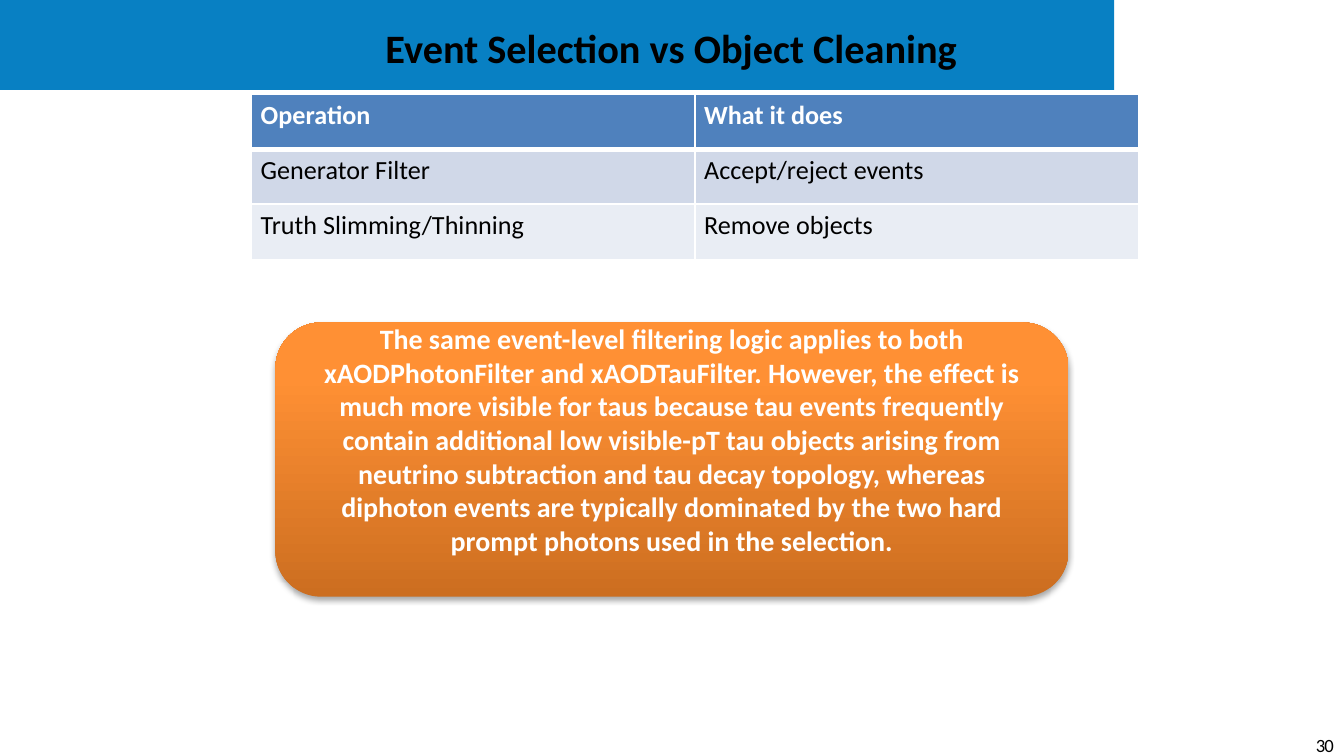
from copy import deepcopy

from lxml.etree import SubElement
from pptx import Presentation
from pptx.dml.color import RGBColor
from pptx.enum.shapes import MSO_SHAPE
from pptx.enum.text import MSO_ANCHOR, PP_ALIGN
from pptx.oxml.ns import qn
from pptx.util import Inches, Pt

COLORS = {
    "banner": "0880C3",
    "header": "4F81BD",
    "band_dark": "D0D8E8",
    "band_light": "E9EDF4",
    "white": "FFFFFF",
    "black": "000000",
    "orange_dark": "CC6E20",
    "orange": "FF9034",
    "orange_light": "FF9136",
}
FONT = "Calibri"

TITLE = "Event Selection vs Object Cleaning"
ROWS = [
    ("Operation", "What it does"),
    ("Generator Filter", "Accept/reject events"),
    ("Truth Slimming/Thinning", "Remove objects"),
]
ROW_FILLS = ["header", "band_dark", "band_light"]
NOTE = (
    "The same event-level filtering logic applies to both xAODPhotonFilter and "
    "xAODTauFilter. However, the effect is much more visible for taus because tau "
    "events frequently contain additional low visible-pT tau objects arising from "
    "neutrino subtraction and tau decay topology, whereas diphoton events are "
    "typically dominated by the two hard prompt photons used in the selection."
)
NOTE_GRADIENT = [(0, "orange_dark"), (0.8, "orange"), (1, "orange_light")]
PAGE_NUMBER = "30"


def rgb(name):
    return RGBColor.from_string(COLORS[name])


def set_text(tf, text, size, color, bold=False, align=PP_ALIGN.LEFT):
    p = tf.paragraphs[0]
    p.text = text
    p.alignment = align
    p.font.name = FONT
    p.font.size = Pt(size)
    p.font.bold = bold
    p.font.color.rgb = rgb(color)
    return p


def add_textbox(slide, box, wrap=True):
    tf = slide.shapes.add_textbox(*map(Inches, box)).text_frame
    tf.word_wrap = wrap
    tf.margin_left = tf.margin_top = tf.margin_right = tf.margin_bottom = 0
    return tf


def set_borders(cell, bottom):
    tcPr = cell._tc.get_or_add_tcPr()
    for side, width in (("L", 1), ("R", 1), ("T", 1), ("B", bottom)):
        ln = SubElement(tcPr, qn(f"a:ln{side}"), w=str(Pt(width)))
        fill = SubElement(ln, qn("a:solidFill"))
        SubElement(fill, qn("a:srgbClr"), val=COLORS["white"])


def add_table(slide, left, top, col_width, row_height):
    n_rows, n_cols = len(ROWS), len(ROWS[0])
    table = slide.shapes.add_table(
        n_rows, n_cols, Inches(left), Inches(top),
        Inches(col_width * n_cols), Inches(row_height * n_rows),
    ).table
    for i, (row, fill) in enumerate(zip(ROWS, ROW_FILLS)):
        is_header = i == 0
        for j, text in enumerate(row):
            cell = table.cell(i, j)
            cell.margin_left = cell.margin_right = Inches(0.07)
            cell.margin_top = cell.margin_bottom = Inches(0.04)
            set_borders(cell, 3 if is_header else 1)
            cell.fill.solid()
            cell.fill.fore_color.rgb = rgb(fill)
            set_text(cell.text_frame, text, 14,
                     "white" if is_header else "black", is_header)


def fill_gradient(sp, stops):
    sp.fill.gradient()
    sp.fill.gradient_angle = 90
    gs_list = sp._element.spPr.find(".//" + qn("a:gsLst"))
    gs_list.append(deepcopy(gs_list[-1]))
    for stop, (position, color) in zip(sp.fill.gradient_stops, stops):
        stop.position = position
        stop.color.rgb = rgb(color)


def add_shadow(sp):
    sp.shadow.inherit = False
    effects = sp._element.spPr.find(qn("a:effectLst"))
    shadow = SubElement(effects, qn("a:outerShdw"), blurRad=str(Pt(3.1)),
                        dist=str(Pt(1.8)), dir="5400000", rotWithShape="0")
    color = SubElement(shadow, qn("a:srgbClr"), val=COLORS["black"])
    SubElement(color, qn("a:alpha"), val="35000")


def add_note(slide, box):
    sp = slide.shapes.add_shape(MSO_SHAPE.ROUNDED_RECTANGLE, *map(Inches, box))
    fill_gradient(sp, NOTE_GRADIENT)
    sp.line.fill.background()
    add_shadow(sp)
    tf = sp.text_frame
    tf.word_wrap = True
    tf.vertical_anchor = MSO_ANCHOR.MIDDLE
    tf.margin_bottom = Inches(0.35)
    set_text(tf, NOTE, 15, "white", True, PP_ALIGN.CENTER)


def add_page_number(slide, box):
    tf = add_textbox(slide, box, wrap=False)
    tf.margin_left = Inches(0.04)
    p = set_text(tf, PAGE_NUMBER, 10, "black")
    p.line_spacing = Pt(10.5)
    p.runs[0].font._element.set("spc", "-50")


def main():
    prs = Presentation()
    prs.slide_width = Inches(10)
    prs.slide_height = prs.slide_width * 9 // 16
    slide = prs.slides.add_slide(prs.slide_layouts[6])

    banner = slide.shapes.add_shape(
        MSO_SHAPE.RECTANGLE, 0, 0, Inches(8.29), Inches(0.67))
    banner.shadow.inherit = False
    banner.fill.solid()
    banner.fill.fore_color.rgb = rgb("banner")
    banner.line.fill.background()

    title = add_textbox(slide, (1.09, 0.17, 7.81, 0.21))
    set_text(title, TITLE, 21.6, "black", True, PP_ALIGN.CENTER)
    add_table(slide, 1.87, 0.7, 3.3, 0.41)
    add_note(slide, (2.05, 2.4, 5.9, 2.04))
    add_page_number(slide, (9.75, 5.48, 0.21, 0.16))
    prs.save("out.pptx")


if __name__ == "__main__":
    main()
